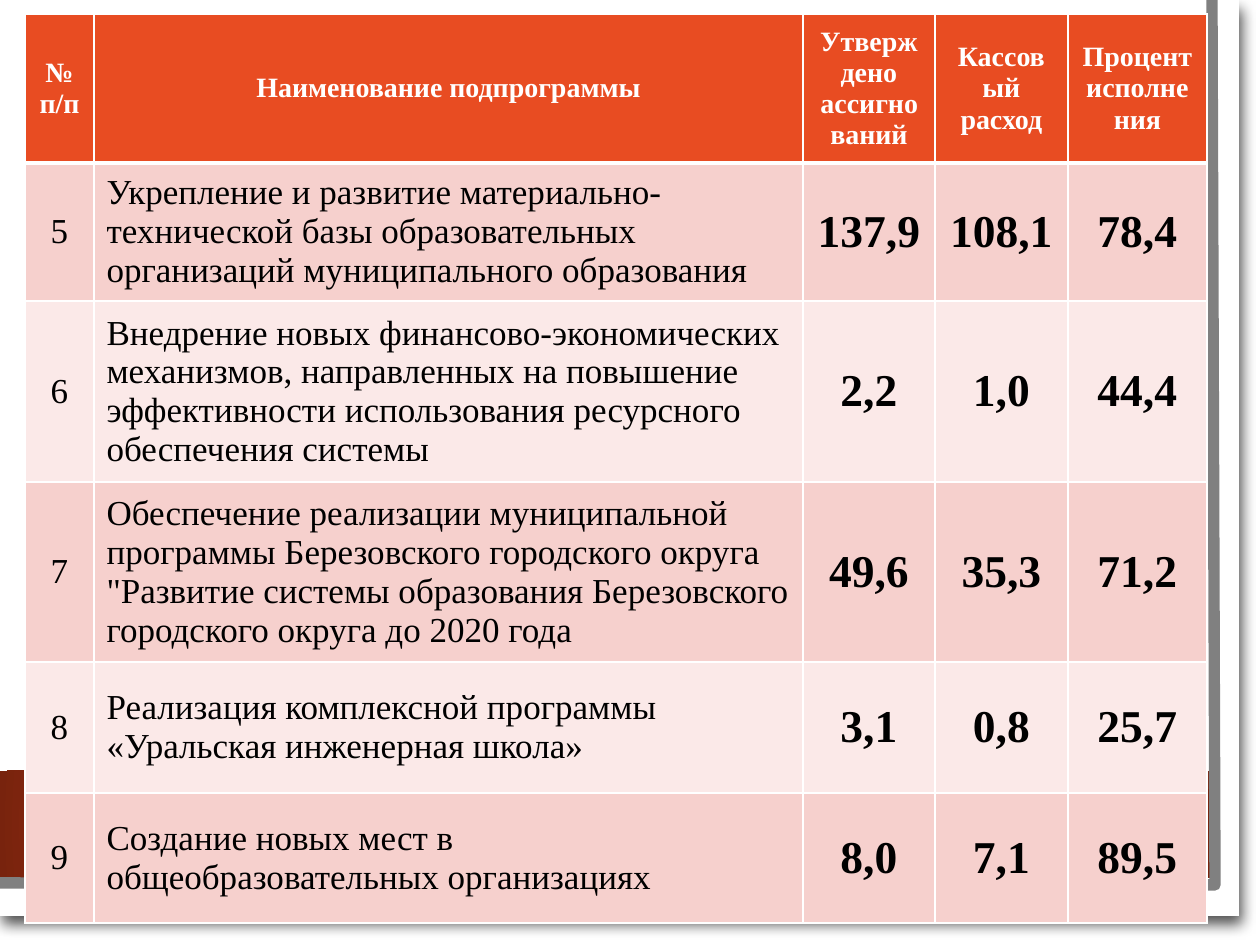
from lxml import etree
from pptx import Presentation
from pptx.dml.color import RGBColor
from pptx.enum.shapes import MSO_SHAPE
from pptx.enum.text import MSO_ANCHOR, PP_ALIGN
from pptx.oxml import parse_xml
from pptx.oxml.ns import nsdecls, qn
from pptx.util import Pt

RECTANGLE = MSO_SHAPE.RECTANGLE
MIDDLE = MSO_ANCHOR.MIDDLE
LEFT, CENTER = PP_ALIGN.LEFT, PP_ALIGN.CENTER

WHITE = RGBColor(0xFF, 0xFF, 0xFF)
BLACK = RGBColor(0, 0, 0)
GRAY = RGBColor(0x80, 0x80, 0x80)
ORANGE = RGBColor(0xE8, 0x4C, 0x22)
BROWN = RGBColor(0x78, 0x23, 0x0D)
PINK = RGBColor(0xF6, 0xD0, 0xCD)
PALE_PINK = RGBColor(0xFB, 0xE9, 0xE8)

FONT = "Times New Roman"
EMU_PER_PX = 914400 // 126

HEADINGS = ["№\nп/п", "Наименование подпрограммы", "Утверждено ассигнований",
            "Кассовый расход", "Процент исполнения"]
SUBPROGRAMS = [
    ("5", "Укрепление и развитие материально-технической базы образовательных "
          "организаций муниципального образования", "137,9", "108,1", "78,4"),
    ("6", "Внедрение новых финансово-экономических механизмов, направленных на "
          "повышение эффективности использования ресурсного обеспечения системы",
     "2,2", "1,0", "44,4"),
    ("7", "Обеспечение реализации муниципальной программы Березовского городского "
          "округа \"Развитие системы образования Березовского городского округа "
          "до 2020 года", "49,6", "35,3", "71,2"),
    ("8", "Реализация комплексной программы «Уральская инженерная школа»",
     "3,1", "0,8", "25,7"),
    ("9", "Создание новых мест в общеобразовательных организациях",
     "8,0", "7,1", "89,5"),
]
NAME_COLUMN = 1
COLUMN_WIDTHS = [69, 709, 132, 133, 139]
ROW_HEIGHTS = [149, 138, 181, 180, 131, 130]
TABLE_LEFT, TABLE_TOP = 25, 14
FRAME_POINTS = [(1212, 0), (1215, 885), (-2, 883)]


def px(length):
    return length * EMU_PER_PX


def add_rectangle(page, left, top, width, height):
    box = page.shapes.add_shape(RECTANGLE, px(left), px(top), px(width), px(height))
    box.shadow.inherit = False
    box.line.fill.background()
    return box


def add_sheet(page):
    sheet = add_rectangle(page, 0, 0, 1239, 916)
    sheet.fill.solid()
    sheet.fill.fore_color.rgb = WHITE
    effects = sheet._element.spPr.find(qn("a:effectLst"))
    shadow = etree.SubElement(effects, qn("a:outerShdw"), blurRad=str(Pt(7.8)),
                              dist=str(Pt(6)), dir=str(73 * 60000), rotWithShape="0")
    color = etree.SubElement(shadow, qn("a:srgbClr"), val=str(BLACK))
    etree.SubElement(color, qn("a:alpha"), val="68000")


def add_band(page):
    """Add the lower band, shaded outwards from its centre."""
    band = add_rectangle(page, 0, 771, 1210, 107)
    band.fill.gradient()
    for stop, color, position in zip(band.fill.gradient_stops, (ORANGE, BROWN), (0.34, 1)):
        stop.color.rgb = color
        stop.position = position
    linear = band._element.spPr.find(qn("a:gradFill")).find(qn("a:lin"))
    radial = parse_xml(
        f'<a:path {nsdecls("a")} path="circle">'
        '<a:fillToRect l="50000" t="50000" r="50000" b="50000"/></a:path>')
    linear.getparent().replace(linear, radial)


def add_frame(page):
    start, *others = [(px(x), px(y)) for x, y in FRAME_POINTS]
    builder = page.shapes.build_freeform(*start)
    builder.add_line_segments(others, close=False)
    frame = builder.convert_to_shape()
    frame.shadow.inherit = False
    frame.fill.background()
    frame.line.color.rgb = GRAY
    frame.line.width = Pt(6.5)


def set_borders(cell, top, bottom):
    properties = cell._tc.get_or_add_tcPr()
    for side, width in (("L", 1), ("R", 1), ("T", top), ("B", bottom)):
        properties.append(parse_xml(
            f'<a:ln{side} {nsdecls("a")} w="{Pt(width)}"><a:solidFill>'
            f'<a:srgbClr val="{WHITE}"/></a:solidFill></a:ln{side}>'))


def fill_cell(cell, text, fill, color, size, bold, align):
    cell.vertical_anchor = MIDDLE
    cell.fill.solid()
    cell.fill.fore_color.rgb = fill
    frame = cell.text_frame
    for index, line in enumerate(text.split("\n")):
        para = frame.add_paragraph() if index else frame.paragraphs[0]
        para.alignment = align
        span = para.add_run()
        span.text = line
        span.font.name = FONT
        span.font.size = Pt(size)
        span.font.bold = bold
        span.font.color.rgb = color


def add_budget_table(page):
    rows = [HEADINGS, *SUBPROGRAMS]
    table = page.shapes.add_table(
        len(rows), len(HEADINGS), px(TABLE_LEFT), px(TABLE_TOP),
        px(sum(COLUMN_WIDTHS)), px(sum(ROW_HEIGHTS))).table
    table.horz_banding = False
    for column, width in zip(table.columns, COLUMN_WIDTHS):
        column.width = px(width)
    for row, height in zip(table.rows, ROW_HEIGHTS):
        row.height = px(height)
    for r, texts in enumerate(rows):
        for c, text in enumerate(texts):
            cell = table.cell(r, c)
            set_borders(cell, 3 if r == 1 else 1, 3 if r == 0 else 1)
            if r == 0:
                fill_cell(cell, text, ORANGE, WHITE, 16, True, CENTER)
                continue
            is_value = c > NAME_COLUMN
            fill_cell(cell, text, PINK if r % 2 else PALE_PINK, BLACK,
                      26 if is_value else 20, is_value,
                      LEFT if c == NAME_COLUMN else CENTER)


def main():
    deck = Presentation()
    deck.slide_width, deck.slide_height = px(1260), px(945)
    page = deck.slides.add_slide(deck.slide_layouts[6])
    add_sheet(page)
    add_band(page)
    add_frame(page)
    add_budget_table(page)
    deck.save("out.pptx")


if __name__ == "__main__":
    main()
